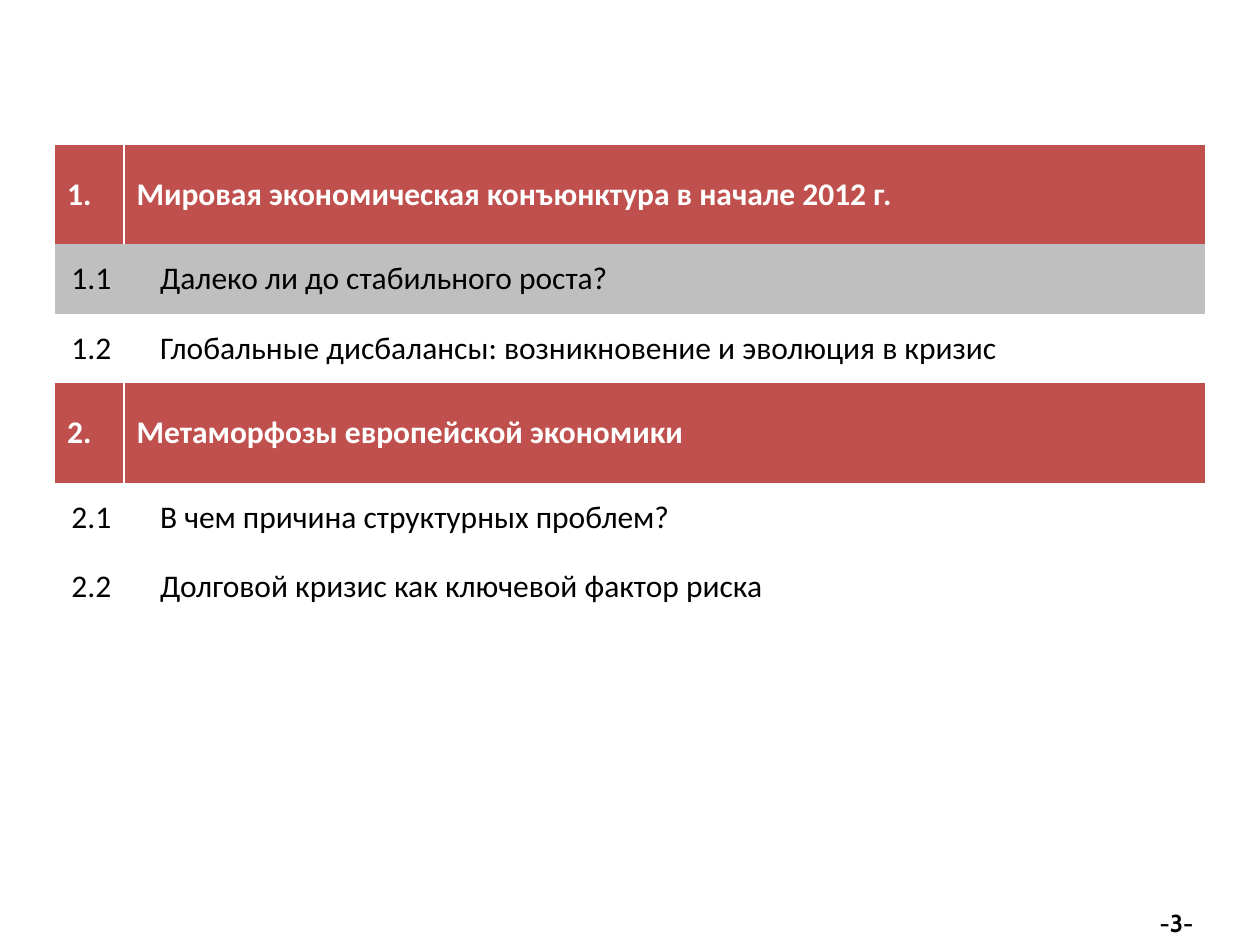
from pptx import Presentation
from pptx.dml.color import RGBColor as RGB
from pptx.enum.text import MSO_ANCHOR as Anchor, PP_ALIGN as Align
from pptx.oxml import parse_xml
from pptx.oxml.ns import nsdecls
from pptx.util import Pt

COLORS = {"head": "C0504D", "mark": "BFBFBF", "text": "000000", "white": "FFFFFF"}
PLAIN_STYLE = "{2D5ABB26-0587-4C30-8999-92F81FD0307C}"  # no fill, no grid
NUM_W, HEAD_H, ITEM_H = 39.6, 56.7, 39.8
INDENT = 13.5

# number, title, fill
AGENDA = [
    ("1.", "Мировая экономическая конъюнктура в начале 2012 г.", "head"),
    ("1.1", "Далеко ли до стабильного роста?", "mark"),
    ("1.2", "Глобальные дисбалансы: возникновение и эволюция в кризис", None),
    ("2.", "Метаморфозы европейской экономики", "head"),
    ("2.1", "В чем причина структурных проблем?", None),
    ("2.2", "Долговой кризис как ключевой фактор риска", None),
]


def set_font(para, name, size, color, bold):
    font = para.font
    font.name, font.size, font.bold = name, Pt(size), bold
    font.color.rgb = RGB.from_string(COLORS[color])


def add_border(cell, side):
    """Draw a white 1 pt line on side L or R of the cell."""
    line = parse_xml(
        f'<a:ln{side} {nsdecls("a")} w="{Pt(1)}"><a:solidFill>'
        f'<a:srgbClr val="{COLORS["white"]}"/></a:solidFill></a:ln{side}>')
    cell._tc.get_or_add_tcPr().insert(0, line)


def fill_cell(cell, text, fill, is_num):
    is_head = fill == "head"
    cell.text = text
    cell.vertical_anchor = Anchor.MIDDLE
    if fill:
        cell.fill.solid()
        cell.fill.fore_color.rgb = RGB.from_string(COLORS[fill])
    else:
        cell.fill.background()
    para = cell.text_frame.paragraphs[0]
    set_font(para, "Calibri", 18, "white" if is_head else "text", is_head)
    if is_head:
        add_border(cell, "R" if is_num else "L")
    elif is_num:
        para.alignment = Align.RIGHT
    else:
        props = para._p.get_or_add_pPr()
        props.set("marL", str(Pt(INDENT)))
        props.set("indent", "0")


def add_agenda(slide, left, top, width):
    heights = [HEAD_H if fill == "head" else ITEM_H for _, _, fill in AGENDA]
    table = slide.shapes.add_table(
        len(AGENDA), 2, Pt(left), Pt(top), Pt(width), Pt(sum(heights))).table
    table.first_row = table.horz_banding = False
    table._tbl.tblPr[0].text = PLAIN_STYLE
    table.columns[0].width = Pt(NUM_W)
    table.columns[1].width = Pt(width - NUM_W)
    for row, height, (num, title, fill) in zip(table.rows, heights, AGENDA):
        row.height = Pt(height)
        fill_cell(row.cells[0], num, fill, True)
        fill_cell(row.cells[1], title, fill, False)


def add_page_number(slide, left, top, width, height):
    box = slide.shapes.add_textbox(Pt(left), Pt(top), Pt(width), Pt(height))
    frame = box.text_frame
    frame.word_wrap = True
    frame.vertical_anchor = Anchor.MIDDLE
    para = frame.paragraphs[0]
    para.text = " -3-"
    para.alignment = Align.RIGHT
    set_font(para, "Cabin", 14, "text", True)


def main():
    deck = Presentation()
    deck.slide_width, deck.slide_height = Pt(720), Pt(540)
    slide = deck.slides.add_slide(deck.slide_layouts[6])
    add_agenda(slide, 31.2, 82.8, 657.4)
    add_page_number(slide, 649.4, 514, 39.6, 26.6)
    deck.save("out.pptx")


if __name__ == "__main__":
    main()
